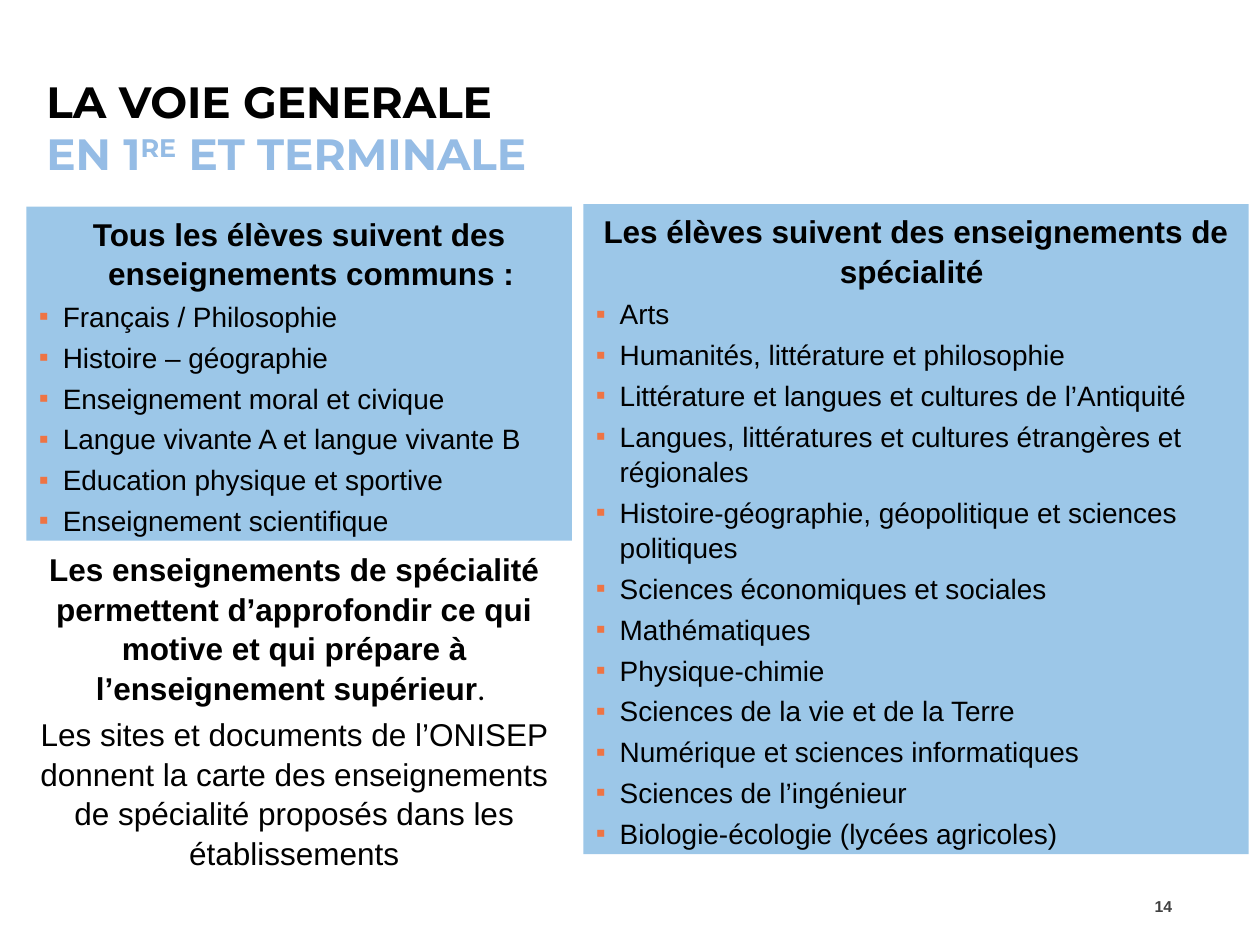
from dataclasses import dataclass

from lxml import etree
from pptx import Presentation
from pptx import util as u
from pptx.dml.color import RGBColor
from pptx.enum import shapes, text
from pptx.oxml.ns import qn

BLACK = RGBColor(0x00, 0x00, 0x00)
GREY = RGBColor(0x40, 0x40, 0x40)
TITLE_BLUE = RGBColor(0x95, 0xBC, 0xE5)
PANEL_BLUE = RGBColor(0x9C, 0xC7, 0xE8)
ORANGE = RGBColor(0xEE, 0x74, 0x44)

# The slide is a grid of 100 columns by 75 rows
CELL = u.Inches(0.1)
COLUMNS, ROWS = 100, 75

BODY_FONT, TITLE_FONT = "Arial", "Montserrat"
HEADING_SIZE, ITEM_SIZE = 18, 16
LINE_SPACING = 1.05
SPACE_SHARE = 0.2  # space before a paragraph, as a share of its text size
HANGING = u.Inches(0.19)


@dataclass(frozen=True)
class Area:
    column: float
    row: float
    columns: float
    rows: float

    def lengths(self) -> list[int]:
        return [round(cells * CELL)
                for cells in (self.column, self.row, self.columns, self.rows)]


@dataclass(frozen=True)
class Panel:
    area: Area
    heading: str
    items: tuple[str, ...]
    heading_hangs: bool = False


PANELS = (
    Panel(
        Area(2.1, 16.4, 43.3, 26.5),
        "Tous les élèves suivent des enseignements communs :",
        (
            "Français / Philosophie",
            "Histoire – géographie",
            "Enseignement moral et civique",
            "Langue vivante A et langue vivante B",
            "Education physique et sportive",
            "Enseignement scientifique",
        ),
        heading_hangs=True,
    ),
    Panel(
        Area(46.3, 16.2, 52.8, 51.6),
        "Les élèves suivent des enseignements de spécialité ",
        (
            "Arts",
            "Humanités, littérature et philosophie",
            "Littérature et langues et cultures de l’Antiquité",
            "Langues, littératures et cultures étrangères et régionales",
            "Histoire-géographie, géopolitique et sciences politiques",
            "Sciences économiques et sociales",
            "Mathématiques",
            "Physique-chimie",
            "Sciences de la vie et de la Terre",
            "Numérique et sciences informatiques",
            "Sciences de l’ingénieur",
            "Biologie-écologie (lycées agricoles)",
        ),
    ),
)


def set_font(font, name: str, size: float, color: RGBColor, bold: bool) -> None:
    font.name, font.size, font.bold = name, u.Pt(size), bold
    font.color.rgb = color


def add_text_box(page, area: Area, anchor=text.MSO_ANCHOR.TOP):
    frame = page.shapes.add_textbox(*area.lengths()).text_frame
    frame.word_wrap = True
    frame.vertical_anchor = anchor
    return frame


def next_para(frame, size: float, align):
    """Return the empty first paragraph, or a new one with space before it."""
    para = frame.paragraphs[0]
    if para.runs:
        para = frame.add_paragraph()
        para.space_before = u.Pt(size * SPACE_SHARE)
    para.alignment = align
    para.line_spacing = LINE_SPACING
    return para


def hang(para) -> None:
    properties = para._p.get_or_add_pPr()
    properties.set("marL", str(HANGING))
    properties.set("indent", str(-HANGING))


def add_bullet(para) -> None:
    hang(para)
    properties = para._p.get_or_add_pPr()
    color = etree.SubElement(properties, qn("a:buClr"))
    etree.SubElement(color, qn("a:srgbClr"), val=str(ORANGE))
    etree.SubElement(properties, qn("a:buFont"), typeface=BODY_FONT)
    etree.SubElement(properties, qn("a:buChar"), char="▪")


def add_panel(page, panel: Panel) -> None:
    box = page.shapes.add_shape(shapes.MSO_SHAPE.RECTANGLE, *panel.area.lengths())
    box.shadow.inherit = False
    box.fill.solid()
    box.fill.fore_color.rgb = PANEL_BLUE
    box.line.fill.background()
    frame = box.text_frame
    frame.word_wrap = True
    frame.vertical_anchor = text.MSO_ANCHOR.TOP

    heading = next_para(frame, HEADING_SIZE, text.PP_ALIGN.CENTER)
    if panel.heading_hangs:
        hang(heading)
    heading.add_run().text = panel.heading
    set_font(heading.font, BODY_FONT, HEADING_SIZE, BLACK, True)

    for item in panel.items:
        para = next_para(frame, ITEM_SIZE, text.PP_ALIGN.LEFT)
        add_bullet(para)
        para.add_run().text = item
        set_font(para.font, BODY_FONT, ITEM_SIZE, BLACK, False)


def add_title(page) -> None:
    frame = add_text_box(page, Area(2.7, 3.9, 96.1, 12.4), text.MSO_ANCHOR.MIDDLE)
    para = frame.paragraphs[0]
    set_font(para.font, TITLE_FONT, 25, TITLE_BLUE, True)
    first = para.add_run()
    first.text = "LA VOIE GENERALE"
    first.font.color.rgb = BLACK
    para.add_line_break()
    for words, raised in (("EN 1", False), ("RE", True), (" ET TERMINALE", False)):
        span = para.add_run()
        span.text = words
        if raised:
            span.font._element.set("baseline", "30000")


def add_advice(page) -> None:
    frame = add_text_box(page, Area(0.8, 43, 45.1, 25.8))
    para = next_para(frame, HEADING_SIZE, text.PP_ALIGN.CENTER)
    set_font(para.font, BODY_FONT, HEADING_SIZE, BLACK, True)
    para.add_run().text = ("Les enseignements de spécialité permettent d’approfondir ce qui "
                           "motive et qui prépare à l’enseignement supérieur")
    stop = para.add_run()
    stop.text = ". "
    stop.font.name, stop.font.bold = "Calibri", False

    para = next_para(frame, HEADING_SIZE, text.PP_ALIGN.CENTER)
    para.add_run().text = ("Les sites et documents de l’ONISEP donnent la carte des "
                           "enseignements de spécialité proposés dans les établissements")
    set_font(para.font, BODY_FONT, HEADING_SIZE, BLACK, False)


def add_page_number(page) -> None:
    frame = add_text_box(page, Area(89.1, 69.9, 4.9, 4), text.MSO_ANCHOR.MIDDLE)
    para = frame.paragraphs[0]
    para.alignment = text.PP_ALIGN.RIGHT
    para.add_run().text = "14"
    set_font(para.font, BODY_FONT, 9, GREY, True)


def main() -> None:
    deck = Presentation()
    deck.slide_width, deck.slide_height = COLUMNS * CELL, ROWS * CELL
    page = deck.slides.add_slide(deck.slide_layouts[6])
    add_title(page)
    add_page_number(page)
    for panel in PANELS:
        add_panel(page, panel)
    add_advice(page)
    deck.save("out.pptx")


if __name__ == "__main__":
    main()
